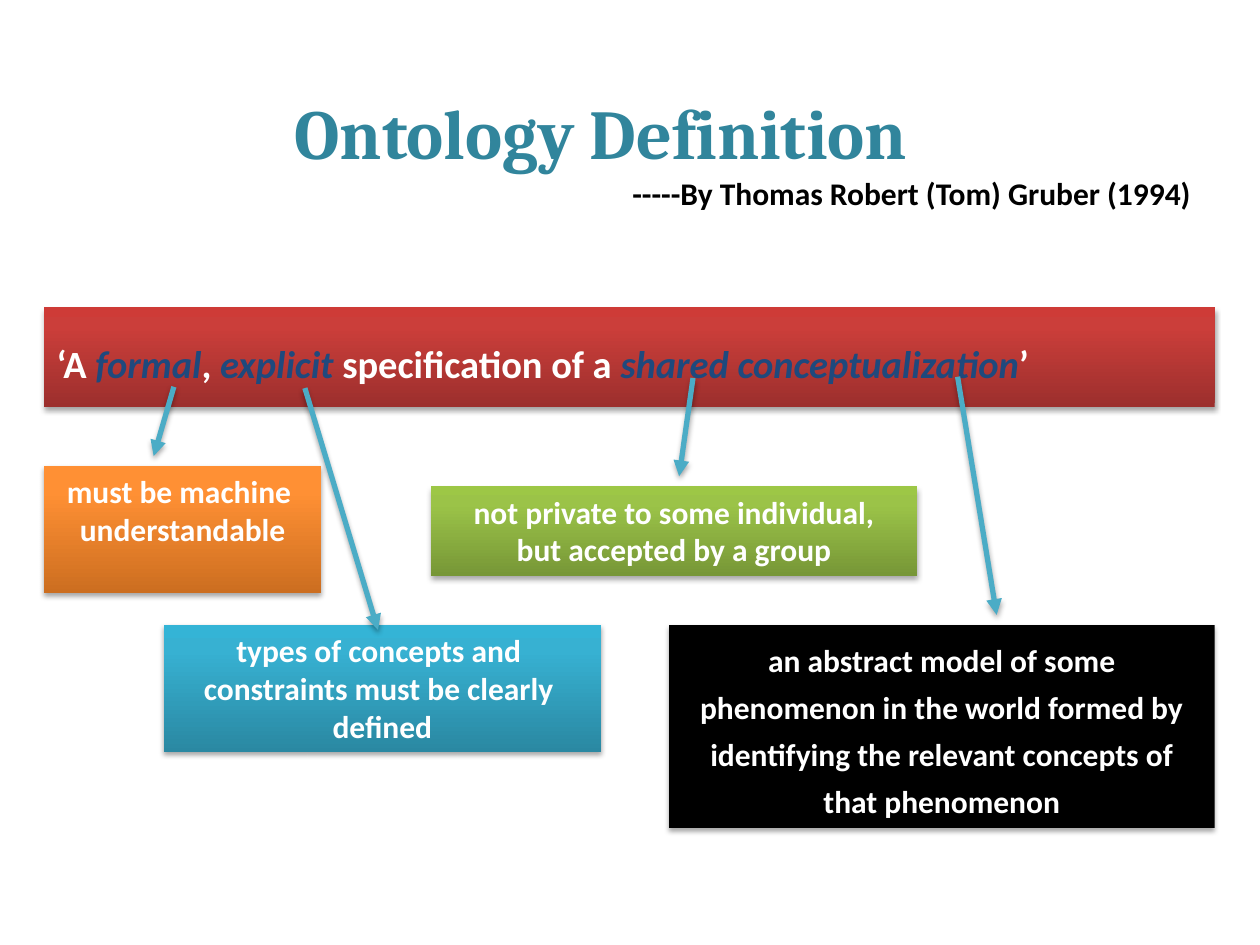
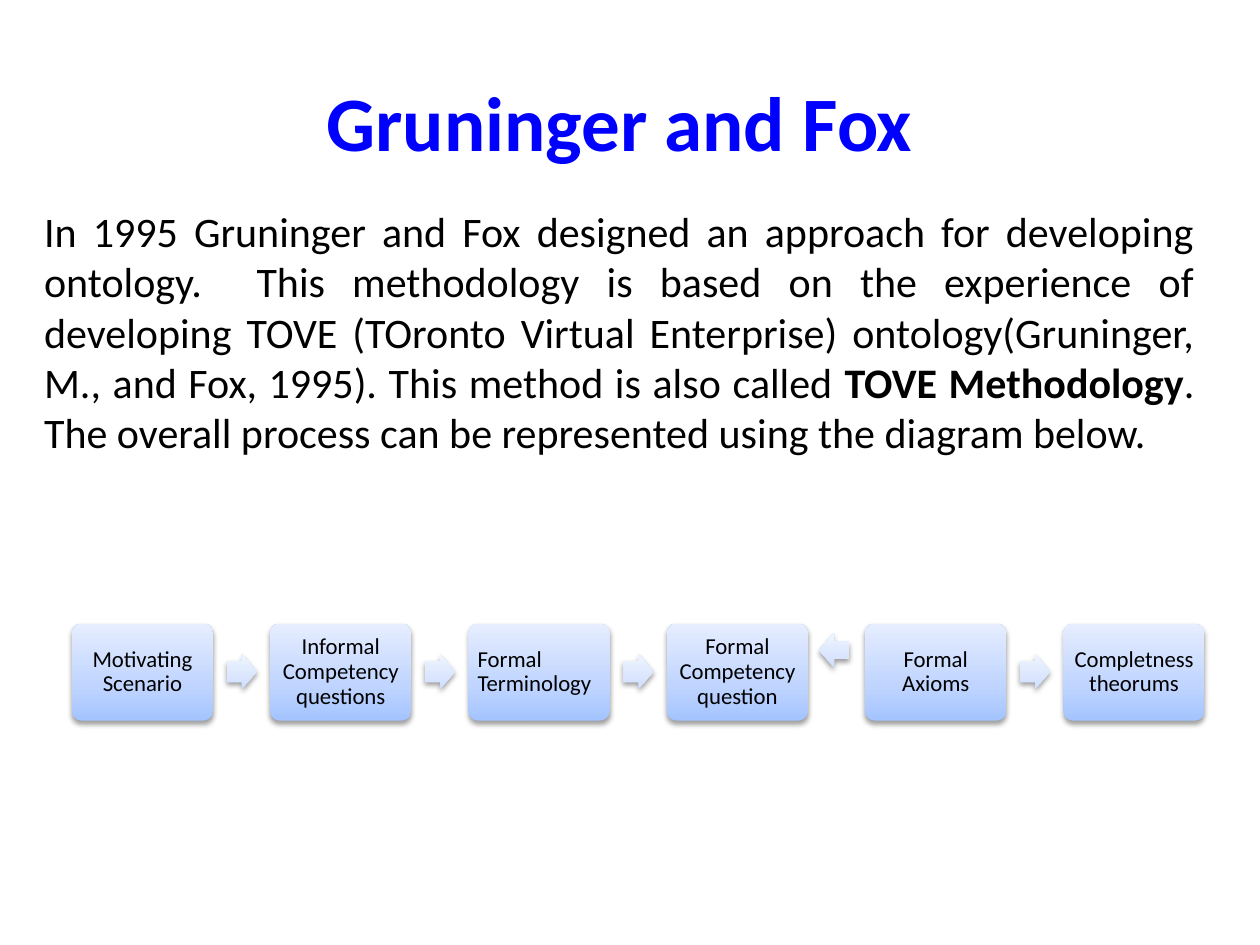
"""Build two slides on the definition of ontology and the Gruninger and Fox method."""
from copy import deepcopy

from lxml.etree import SubElement
from pptx import Presentation
from pptx.dml.color import RGBColor
from pptx.enum.shapes import MSO_CONNECTOR, MSO_SHAPE
from pptx.enum.text import MSO_ANCHOR, PP_ALIGN
from pptx.oxml.ns import qn
from pptx.util import Inches, Pt

COLORS = {
    "black": "000000", "white": "FFFFFF", "navy": "1F497D",
    "teal": "31859C", "blue": "0000FF", "arrow": "4BACC6",
}
GRADIENTS = {
    "red": [(0, "9C2F2D"), (0.8, "CB3E3A"), (1, "CE3B37")],
    "orange": [(0, "CC6E20"), (0.8, "FF9034"), (1, "FF9136")],
    "aqua": [(0, "2A88A2"), (0.8, "37B1D2"), (1, "34B4D6")],
    "green": [(0, "779737"), (0.8, "9BC348"), (1, "9DC746")],
    "black": [(0, "000000"), (0.5, "000000"), (1, "000000")],
    "card": [(0, "A4C4FF"), (0.35, "BFD4FF"), (1, "E6EEFF")],
    "step": [(0, "CDDDFE"), (0.35, "DBE6FE"), (1, "F0F5FF")],
}


def style_text(shape, size, color, bold=False, align=PP_ALIGN.CENTER, font="Calibri"):
    """Format every run of a shape in the same way."""
    shape.text_frame.word_wrap = True
    for paragraph in shape.text_frame.paragraphs:
        paragraph.alignment = align
        for run in paragraph.runs:
            run.font.name = font
            run.font.size = Pt(size)
            run.font.bold = bold
            run.font.color.rgb = RGBColor.from_string(COLORS[color])


def style_surface(shape, gradient=None, alpha=35):
    """Give a shape an upward gradient, no outline and a soft shadow below."""
    properties = shape.element.spPr
    if gradient:
        shape.fill.gradient()
        shape.fill.gradient_angle = 90
        stop_list = properties.find(".//" + qn("a:gsLst"))
        stop_list.append(deepcopy(stop_list[0]))
        for stop, (position, color) in zip(shape.fill.gradient_stops, GRADIENTS[gradient]):
            stop.position = position
            stop.color.rgb = RGBColor.from_string(color)
        shape.line.fill.background()
    effects = SubElement(properties, qn("a:effectLst"))
    shadow = SubElement(effects, qn("a:outerShdw"), blurRad=str(Pt(3.1)), dist=str(Pt(1.8)),
                        dir="5400000", rotWithShape="0")
    shadow_color = SubElement(shadow, qn("a:srgbClr"), val=COLORS["black"])
    SubElement(shadow_color, qn("a:alpha"), val=str(alpha * 1000))


presentation = Presentation()
presentation.slide_width = Inches(10)
presentation.slide_height = Inches(7.5)
title_only, title_and_content = presentation.slide_layouts[5], presentation.slide_layouts[1]

slide = presentation.slides.add_slide(title_only)
title = slide.shapes.title
title.left, title.top, title.width, title.height = map(Inches, (2.12, 0.66, 5.3, 0.77))
title.text_frame.text = "Ontology Definition"
style_text(title, 40, "teal", bold=True, font="Cambria")

author = slide.shapes.add_textbox(Inches(4.92), Inches(1.33), Inches(5.04), Inches(0.42))
author.text_frame.text = "-----By Thomas Robert (Tom) Gruber (1994)"
style_text(author, 18, "black", bold=True, align=PP_ALIGN.LEFT)

banner = slide.shapes.add_shape(
    MSO_SHAPE.RECTANGLE, Inches(0.35), Inches(2.44), Inches(9.29), Inches(0.79))
style_surface(banner, "red")
banner.text_frame.vertical_anchor = MSO_ANCHOR.MIDDLE
definition = banner.text_frame.paragraphs[0]
definition.line_spacing = 1.25
definition.space_before = Pt(12)
phrases = ["‘A ", "formal", ", ", "explicit", " specification of a ",
           "shared conceptualization", "’"]
for phrase in phrases:
    definition.add_run().text = phrase
style_text(banner, 22, "white", bold=True, align=PP_ALIGN.LEFT)
for key_term in definition.runs[1::2]:
    key_term.font.italic = True
    key_term.font.color.rgb = RGBColor.from_string(COLORS["navy"])

explanations = [
    ("orange", 0.35, 3.7, 2.2, 1.01, "must be machine \nunderstandable"),
    ("aqua", 1.3, 4.96, 3.47, 1.01,
     "types of concepts and \nconstraints must be clearly \ndefined"),
    ("green", 3.42, 3.86, 3.86, 0.71,
     "not private to some individual,\nbut accepted by a group"),
    ("black", 5.31, 4.96, 4.33, 1.61,
     "an abstract model of some phenomenon in the world formed by "
     "identifying the relevant concepts of that phenomenon"),
]
for gradient, left, top, width, height, text in explanations:
    box = slide.shapes.add_shape(
        MSO_SHAPE.RECTANGLE, Inches(left), Inches(top), Inches(width), Inches(height))
    style_surface(box, gradient)
    box.text_frame.text = text
    box.text_frame.vertical_anchor = MSO_ANCHOR.TOP
    style_text(box, 18, "white", bold=True)
abstract_model = box.text_frame.paragraphs[0]
abstract_model.line_spacing = 1.25
abstract_model.space_before = Pt(9)

pointers = [(1.38, 3.07, 1.22, 3.62), (2.42, 3.08, 3, 5),
            (5.5, 3, 5.39, 3.78), (7.6, 2.99, 7.91, 4.88)]
for ends in pointers:
    pointer = slide.shapes.add_connector(MSO_CONNECTOR.STRAIGHT, *map(Inches, ends))
    pointer.line.color.rgb = RGBColor.from_string(COLORS["arrow"])
    pointer.line.width = Pt(3)
    line_properties = pointer.element.spPr.find(qn("a:ln"))
    SubElement(line_properties, qn("a:tailEnd"), type="triangle")
    style_surface(pointer)

slide = presentation.slides.add_slide(title_and_content)
title = slide.shapes.title
title.left, title.top, title.width, title.height = map(Inches, (0.42, 0.33, 9, 1.25))
title.text_frame.text = "Gruninger and Fox"
style_text(title, 44, "blue", bold=True)

body = slide.placeholders[1]
body.left, body.top, body.width, body.height = map(Inches, (0.25, 1.58, 9.33, 2.12))
summary = body.text_frame.paragraphs[0]
sentences = [
    "In 1995 Gruninger and Fox designed an approach for developing ontology.  This "
    "methodology is based on the experience of developing TOVE (TOronto Virtual "
    "Enterprise) ontology(Gruninger, M., and Fox, 1995). This method is also called ",
    "TOVE Methodology",
    ". The overall process can be represented using the diagram below.",
]
for sentence in sentences:
    summary.add_run().text = sentence
style_text(body, 24, "black", align=PP_ALIGN.JUSTIFY)
summary.runs[1].font.bold = True
summary.space_before = Pt(0)
paragraph_properties = summary._p.get_or_add_pPr()
paragraph_properties.set("marL", "0")
paragraph_properties.set("indent", "0")
SubElement(paragraph_properties, qn("a:buNone"))

stages = ["Motivating Scenario", "Informal Competency questions", "Formal Terminology",
          "Formal Competency question", "Formal Axioms", "Completness theorums"]
first_left, last_left = 0.57, 8.44
stage_pitch = (last_left - first_left) / (len(stages) - 1)
for index, stage in enumerate(stages):
    left = first_left + index * stage_pitch
    card = slide.shapes.add_shape(
        MSO_SHAPE.ROUNDED_RECTANGLE, Inches(left), Inches(4.95), Inches(1.12), Inches(0.77))
    card.adjustments[0] = 0.1
    style_surface(card, "card", alpha=38)
    frame = card.text_frame
    frame.text = stage
    frame.vertical_anchor = MSO_ANCHOR.MIDDLE
    frame.margin_left = frame.margin_right = Inches(0.05)
    frame.margin_top = frame.margin_bottom = Inches(0.05)
    frame.paragraphs[0].line_spacing = 0.9
    align = PP_ALIGN.LEFT if stage == "Formal Terminology" else PP_ALIGN.CENTER
    style_text(card, 13, "black", align=align)
    if index == len(stages) - 1:
        continue
    if stage == "Formal Competency question":
        step = slide.shapes.add_shape(
            MSO_SHAPE.LEFT_ARROW, Inches(6.5), Inches(5.02), Inches(0.24), Inches(0.28))
    else:
        step = slide.shapes.add_shape(
            MSO_SHAPE.RIGHT_ARROW, Inches(left + 1.23), Inches(5.19), Inches(0.24), Inches(0.28))
        step.adjustments[0] = 0.6
    style_surface(step, "step", alpha=38)

presentation.save("out.pptx")
